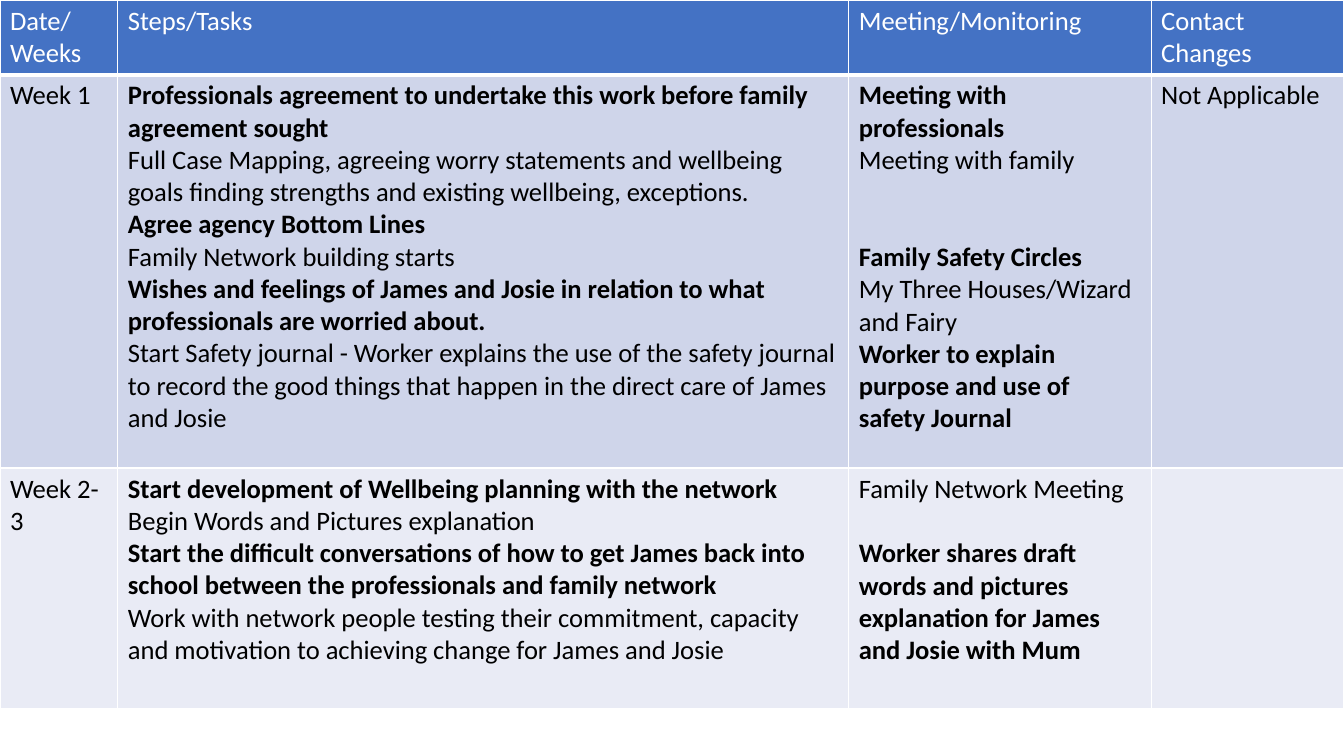
import dataclasses

import pptx
import pptx.dml.color
import pptx.oxml
import pptx.oxml.ns
import pptx.table
import pptx.util

FONT = "Calibri"
TEXT_SIZE = 19
LINE_HEIGHT = 23.2
WHITE, BLACK = "FFFFFF", "000000"
COLUMN_WIDTHS = (2.97, 18.42, 7.62, 4.86)


@dataclasses.dataclass(frozen=True)
class Entry:
    text: str
    bold: bool = False
    lines_before: int = 0


@dataclasses.dataclass(frozen=True)
class PlanRow:
    height: float
    fill: str
    ink: str
    cells: tuple[tuple[Entry, ...], ...]
    bottom_border: int = 1


PLAN = (
    PlanRow(1.7, "4472C4", WHITE, (
        (Entry("Date/"), Entry("Weeks")),
        (Entry("Steps/Tasks"),),
        (Entry("Meeting/Monitoring"),),
        (Entry("Contact Changes"),),
    ), bottom_border=3),
    PlanRow(9.91, "CFD5EA", BLACK, (
        (Entry("Week 1"),),
        (
            Entry("Professionals agreement to undertake this work before family agreement sought", True),
            Entry("Full Case Mapping, agreeing worry statements and wellbeing goals "
                  "finding strengths and existing wellbeing, exceptions."),
            Entry("Agree agency Bottom Lines", True),
            Entry("Family Network building starts"),
            Entry("Wishes and feelings of James and Josie in relation to what "
                  "professionals are worried about.", True),
            Entry("Start Safety journal - Worker explains the use of the safety journal to record "
                  "the good things that happen in the direct care of James and Josie"),
        ),
        (
            Entry("Meeting with professionals", True),
            Entry("Meeting with family"),
            Entry("Family Safety Circles", True, lines_before=2),
            Entry("My Three Houses/Wizard and Fairy"),
            Entry("Worker to explain purpose and use of safety Journal", True),
        ),
        (Entry("Not Applicable"),),
    )),
    PlanRow(6.07, "E9EBF5", BLACK, (
        (Entry("Week 2-3"),),
        (
            Entry("Start development of Wellbeing planning with the network", True),
            Entry("Begin Words and Pictures explanation"),
            Entry("Start the difficult conversations of how to get James back into school "
                  "between the professionals and family network", True),
            Entry("Work with network people testing their commitment, capacity and motivation "
                  "to achieving change for James and Josie"),
        ),
        (
            Entry("Family Network Meeting"),
            Entry("Worker shares draft words and pictures explanation for James and Josie with Mum",
                  True, lines_before=1),
        ),
        (),
    )),
)


def color(hex_code: str) -> pptx.dml.color.RGBColor:
    return pptx.dml.color.RGBColor.from_string(hex_code)


def draw_borders(cell: pptx.table._Cell, bottom_width: int) -> None:
    properties = cell._tc.get_or_add_tcPr()
    for side, width in (("L", 1), ("R", 1), ("T", 1), ("B", bottom_width)):
        properties.append(pptx.oxml.parse_xml(
            f'<a:ln{side} {pptx.oxml.ns.nsdecls("a")} w="{pptx.util.Pt(width)}">'
            f'<a:solidFill><a:srgbClr val="{WHITE}"/></a:solidFill></a:ln{side}>'
        ))


def write_entries(cell: pptx.table._Cell, entries: tuple[Entry, ...], ink: str) -> None:
    frame = cell.text_frame
    for index, entry in enumerate(entries):
        paragraph = frame.add_paragraph() if index else frame.paragraphs[0]
        if entry.lines_before:
            paragraph.space_before = pptx.util.Pt(entry.lines_before * LINE_HEIGHT)
        run = paragraph.add_run()
        run.text = entry.text
        run.font.name = FONT
        run.font.size = pptx.util.Pt(TEXT_SIZE)
        run.font.bold = entry.bold
        run.font.color.rgb = color(ink)


def draw_row(schedule: pptx.table.Table, index: int, plan_row: PlanRow) -> None:
    schedule.rows[index].height = pptx.util.Cm(plan_row.height)
    for column, entries in enumerate(plan_row.cells):
        cell = schedule.cell(index, column)
        draw_borders(cell, plan_row.bottom_border)
        cell.fill.solid()
        cell.fill.fore_color.rgb = color(plan_row.fill)
        write_entries(cell, entries, plan_row.ink)


def main() -> None:
    presentation = pptx.Presentation()
    presentation.slide_width = pptx.util.Cm(33.87)
    presentation.slide_height = pptx.util.Cm(19.05)
    slide = presentation.slides.add_slide(presentation.slide_layouts[6])
    schedule = slide.shapes.add_table(
        len(PLAN), len(COLUMN_WIDTHS), 0, 0,
        pptx.util.Cm(sum(COLUMN_WIDTHS)),
        pptx.util.Cm(sum(plan_row.height for plan_row in PLAN)),
    ).table
    for column, width in zip(schedule.columns, COLUMN_WIDTHS):
        column.width = pptx.util.Cm(width)
    for index, plan_row in enumerate(PLAN):
        draw_row(schedule, index, plan_row)
    presentation.save("out.pptx")


if __name__ == "__main__":
    main()
